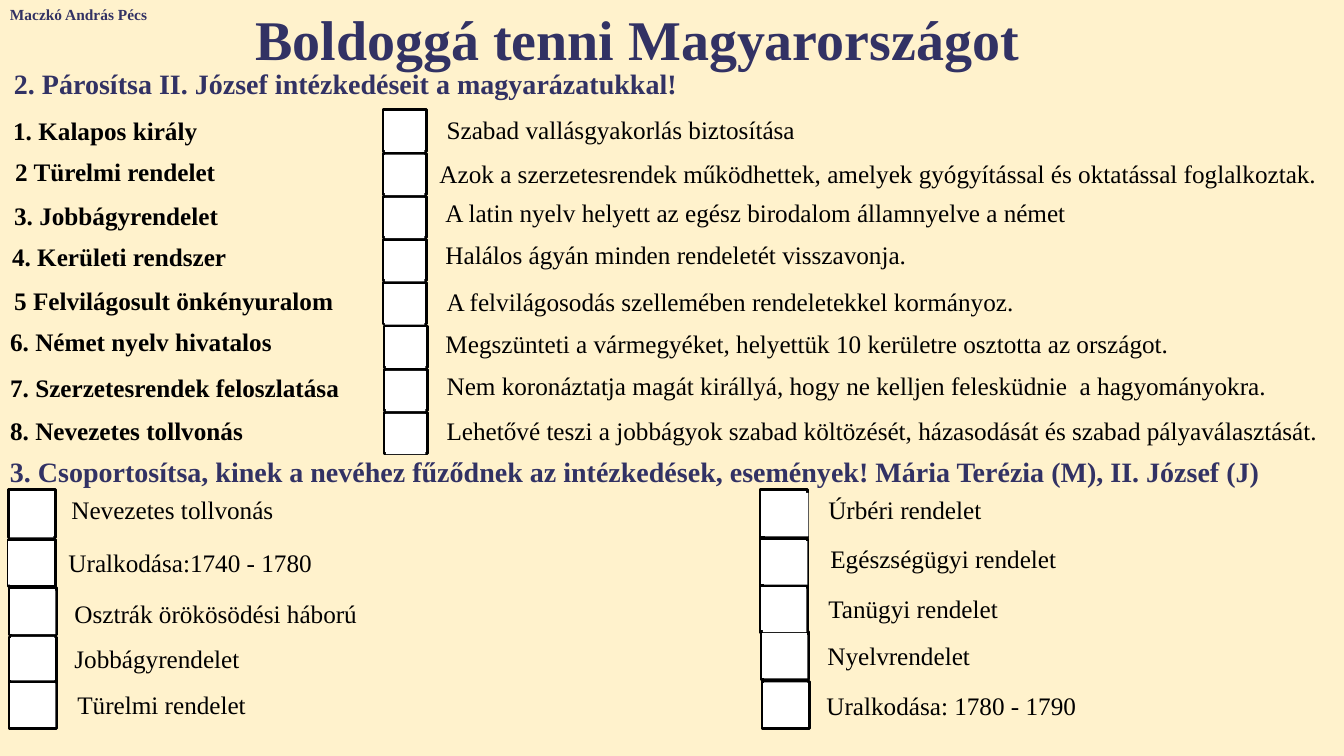
from pptx import Presentation
from pptx.dml.color import RGBColor
from pptx.enum.shapes import MSO_SHAPE
from pptx.enum.text import MSO_ANCHOR, MSO_AUTO_SIZE, PP_ALIGN
from pptx.util import Pt

COLORS = {"cream": "FFF2CC", "navy": "323264", "black": "000000", "white": "FFFFFF"}
NO_GRID_STYLE = "{2D5ABB26-0587-4C30-8999-92F81FD0307C}"

deck = Presentation()
deck.slide_width, deck.slide_height = Pt(960), Pt(540)
slide = deck.slides.add_slide(deck.slide_layouts[6])
slide.background.fill.solid()
slide.background.fill.fore_color.rgb = RGBColor.from_string(COLORS["cream"])


def write(frame, wording, size, color, bold):
    frame.text = wording
    font = frame.paragraphs[0].runs[0].font
    font.name, font.size, font.bold = "Times New Roman", Pt(size), bold
    font.color.rgb = RGBColor.from_string(COLORS[color])


def add_square(left, top, width, height, outlined):
    square = slide.shapes.add_shape(
        MSO_SHAPE.RECTANGLE, Pt(left), Pt(top), Pt(width), Pt(height))
    square.shadow.inherit = False
    square.fill.solid()
    square.fill.fore_color.rgb = RGBColor.from_string(COLORS["white"])
    if outlined:
        square.line.color.rgb = RGBColor.from_string(COLORS["black"])
        square.line.width = Pt(2)
    else:
        square.line.fill.background()


headings = [
    ("Maczkó András Pécs", 0, 0, 114.5, 20.9, 11),
    ("Boldoggá tenni Magyarországot", 132.5, 0, 645, 55.4, 40),
    ("2. Párosítsa II. József intézkedéseit a magyarázatukkal!", 2.9, 43.9, 497.5, 31.7, 20),
    ("3. Csoportosítsa, kinek a nevéhez fűződnek az intézkedések, események! "
     "Mária Terézia (M), II. József (J)", 0, 321.1, 922.3, 31.7, 20),
]
for wording, left, top, width, height, size in headings:
    heading = slide.shapes.add_textbox(Pt(left), Pt(top), Pt(width), Pt(height))
    heading.text_frame.word_wrap = True
    heading.text_frame.auto_size = MSO_AUTO_SIZE.SHAPE_TO_FIT_TEXT
    write(heading.text_frame, wording, size, "navy", True)
    if size == 40:
        heading.text_frame.paragraphs[0].alignment = PP_ALIGN.CENTER

measures = [
    ("1. Kalapos király", 2.2, 79.9, 151.2),
    ("2 Türelmi rendelet", 3.6, 109.4, 190.1),
    ("3. Jobbágyrendelet", 2.9, 140.4, 172.1),
    ("4. Kerületi rendszer", 1.4, 169.9, 191.5),
    ("5 Felvilágosult önkényuralom", 2.9, 201.6, 270.7),
    ("6. Német nyelv hivatalos", 0, 230.4, 231.1),
    ("7. Szerzetesrendek feloszlatása", 0, 263.5, 252.7),
    ("8. Nevezetes tollvonás", 0, 293.8, 210.2),
]
explanations = [
    ("Szabad vallásgyakorlás biztosítása", 311.8, 79.2, 280.1),
    ("Azok a szerzetesrendek működhettek, amelyek gyógyítással és oktatással foglalkoztak.",
     306.7, 110.2, 653.8),
    ("A latin nyelv helyett az egész birodalom államnyelve a német", 311, 138.2, 459.4),
    ("Halálos ágyán minden rendeletét visszavonja.", 311, 168.5, 366.5),
    ("A felvilágosodás szellemében rendeletekkel kormányoz.", 311.8, 202.3, 459.4),
    ("Megszünteti a vármegyéket, helyettük 10 kerületre osztotta az országot.",
     311, 231.8, 532.1),
    ("Nem koronáztatja magát királlyá, hogy ne kelljen felesküdnie  a hagyományokra.",
     311.8, 262.1, 608.4),
    ("Lehetővé teszi a jobbágyok szabad költözését, házasodását és szabad pályaválasztását.",
     311.8, 293.8, 648),
]
for entries, bold in ((measures, True), (explanations, False)):
    for wording, left, top, width in entries:
        table = slide.shapes.add_table(
            1, 1, Pt(left), Pt(top), Pt(width), Pt(28.8)).table
        table.first_row = table.horz_banding = False
        table._tbl.tblPr[0].text = NO_GRID_STYLE
        cell = table.cell(0, 0)
        cell.fill.background()
        cell.vertical_anchor = MSO_ANCHOR.MIDDLE
        write(cell.text_frame, wording, 18, "black", bold)

for outlined in (True, False):
    for row in range(len(measures)):
        left = 273.6 if row < 5 else 274.3
        top = 78.5 + 30.86 * row
        if outlined:
            add_square(left, top, 31, 29.5, True)
        else:
            add_square(left + 1.4, top + 1.2, 28.1, 28.8, False)

events = [
    ("Nevezetes tollvonás", (43.9, 349.9, 160.6), (5.8, 349.9), (7.2, 352.8)),
    ("Uralkodása:1740 - 1780", (41.8, 387.4, 195.1), (5.8, 385.2), (5.8, 386.6)),
    ("Osztrák örökösödési háború", (46.1, 424.1, 218.2), (6.5, 419.8), (8.6, 421.9)),
    ("Jobbágyrendelet", (46.1, 455.8, 133.9), (6.5, 455), (7.9, 455)),
    ("Türelmi rendelet", (48.2, 488.9, 136.1), (6.5, 486.7), (8.6, 488.2)),
    ("Úrbéri rendelet", (584.6, 349.2, 125.3), (542.9, 349.9), (546.5, 352.1)),
    ("Egészségügyi rendelet", (586.1, 384.5, 177.8), (542.9, 384.5), (545.8, 386.6)),
    ("Tanügyi rendelet", (584.6, 420.5, 136.8), (542.9, 418.3), (545, 420.5)),
    ("Nyelvrendelet", (583.9, 453.6, 117.4), (543.6, 451.4), (545.8, 453.6)),
    ("Uralkodása: 1780 - 1790", (583.2, 489.6, 195.1), (544.3, 486.7), (545.8, 487.4)),
]
for wording, (left, top, width), frame_corner, inner_corner in events:
    add_square(*frame_corner, 33.8, 33.8, True)
    event = slide.shapes.add_textbox(Pt(left), Pt(top), Pt(width), Pt(28.8))
    event.text_frame.word_wrap = False
    event.text_frame.auto_size = MSO_AUTO_SIZE.SHAPE_TO_FIT_TEXT
    write(event.text_frame, wording, 18, "black", False)
for wording, place, frame_corner, inner_corner in events:
    add_square(*inner_corner, 31, 31, False)

deck.save("out.pptx")
